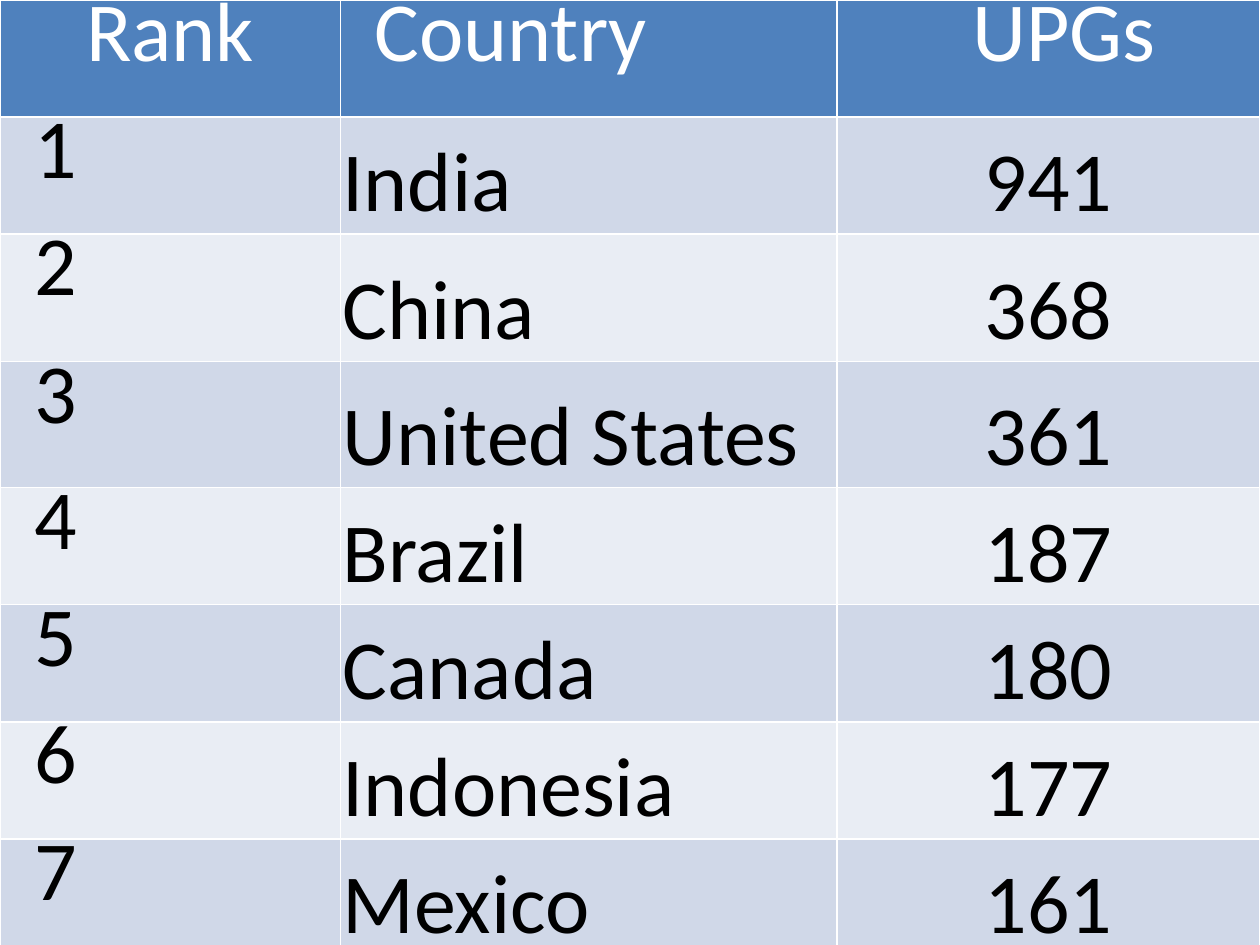
"""Build a slide that ranks seven countries by their number of UPGs."""

from dataclasses import dataclass

from pptx import Presentation
from pptx.dml.color import RGBColor
from pptx.enum.text import MSO_ANCHOR, PP_ALIGN
from pptx.table import Table, _Cell
from pptx.util import Cm, Pt

COLORS = {
    "header": "4F81BD",
    "odd_row": "D0D8E8",
    "even_row": "E9EDF4",
    "header_text": "FFFFFF",
    "body_text": "000000",
}
FONT_NAME = "Calibri"
FONT_SIZE = Pt(48)
LINE_HEIGHT = Pt(24)
SIDE_MARGIN = Cm(0.05)
FIRST_LINE_INDENT = Cm(0.64)
COLUMN_WIDTHS = (6.86, 10.01, 8.53)
ROW_HEIGHTS = (2.36, 2.36, 2.57, 2.54, 2.36, 2.36, 2.36, 2.36)
HEADINGS = ("Rank", "Country", "UPGs")
COUNTRIES = (
    ("India", 941),
    ("China", 368),
    ("United States", 361),
    ("Brazil", 187),
    ("Canada", 180),
    ("Indonesia", 177),
    ("Mexico", 161),
)


@dataclass(frozen=True)
class CellStyle:
    """Placement of the text in a cell."""

    alignment: PP_ALIGN
    indented: bool = False
    at_bottom: bool = False


HEADER_STYLES = (
    CellStyle(PP_ALIGN.CENTER),
    CellStyle(PP_ALIGN.JUSTIFY, indented=True),
    CellStyle(PP_ALIGN.CENTER, indented=True),
)
BODY_STYLES = (
    CellStyle(PP_ALIGN.JUSTIFY, indented=True),
    CellStyle(PP_ALIGN.LEFT, at_bottom=True),
    CellStyle(PP_ALIGN.CENTER, at_bottom=True),
)


def fill_cell(cell: _Cell, text: str, style: CellStyle, fill: str, color: str) -> None:
    """Write and format one table cell."""
    cell.fill.solid()
    cell.fill.fore_color.rgb = RGBColor.from_string(COLORS[fill])
    cell.margin_left = cell.margin_right = SIDE_MARGIN
    cell.margin_top = 0 if style.at_bottom else LINE_HEIGHT
    cell.margin_bottom = 0
    cell.vertical_anchor = MSO_ANCHOR.BOTTOM if style.at_bottom else MSO_ANCHOR.TOP
    cell.text_frame.text = text
    paragraph = cell.text_frame.paragraphs[0]
    paragraph.alignment = style.alignment
    paragraph.line_spacing = LINE_HEIGHT
    if style.indented:
        properties = paragraph._p.get_or_add_pPr()
        properties.set("marL", "0")
        properties.set("indent", str(FIRST_LINE_INDENT))
    font = paragraph.runs[0].font
    font.name = FONT_NAME
    font.size = FONT_SIZE
    font.bold = False
    font.color.rgb = RGBColor.from_string(COLORS[color])


def fill_row(
    table: Table,
    row: int,
    texts: tuple[str, ...],
    styles: tuple[CellStyle, ...],
    fill: str,
    color: str,
) -> None:
    """Write all cells of one table row."""
    for column, (text, style) in enumerate(zip(texts, styles)):
        fill_cell(table.cell(row, column), text, style, fill, color)


def main() -> None:
    """Create the presentation and save it."""
    presentation = Presentation()
    presentation.slide_width, presentation.slide_height = Cm(25.4), Cm(19.05)
    slide = presentation.slides.add_slide(presentation.slide_layouts[6])
    table = slide.shapes.add_table(
        len(ROW_HEIGHTS),
        len(COLUMN_WIDTHS),
        Cm(0),
        Cm(0),
        Cm(sum(COLUMN_WIDTHS)),
        Cm(sum(ROW_HEIGHTS)),
    ).table
    for column, width in zip(table.columns, COLUMN_WIDTHS):
        column.width = Cm(width)
    for row, height in zip(table.rows, ROW_HEIGHTS):
        row.height = Cm(height)

    fill_row(table, 0, HEADINGS, HEADER_STYLES, "header", "header_text")
    for rank, (country, groups) in enumerate(COUNTRIES, start=1):
        fill = "odd_row" if rank % 2 else "even_row"
        texts = (str(rank), country, str(groups))
        fill_row(table, rank, texts, BODY_STYLES, fill, "body_text")

    presentation.save("out.pptx")


if __name__ == "__main__":
    main()
